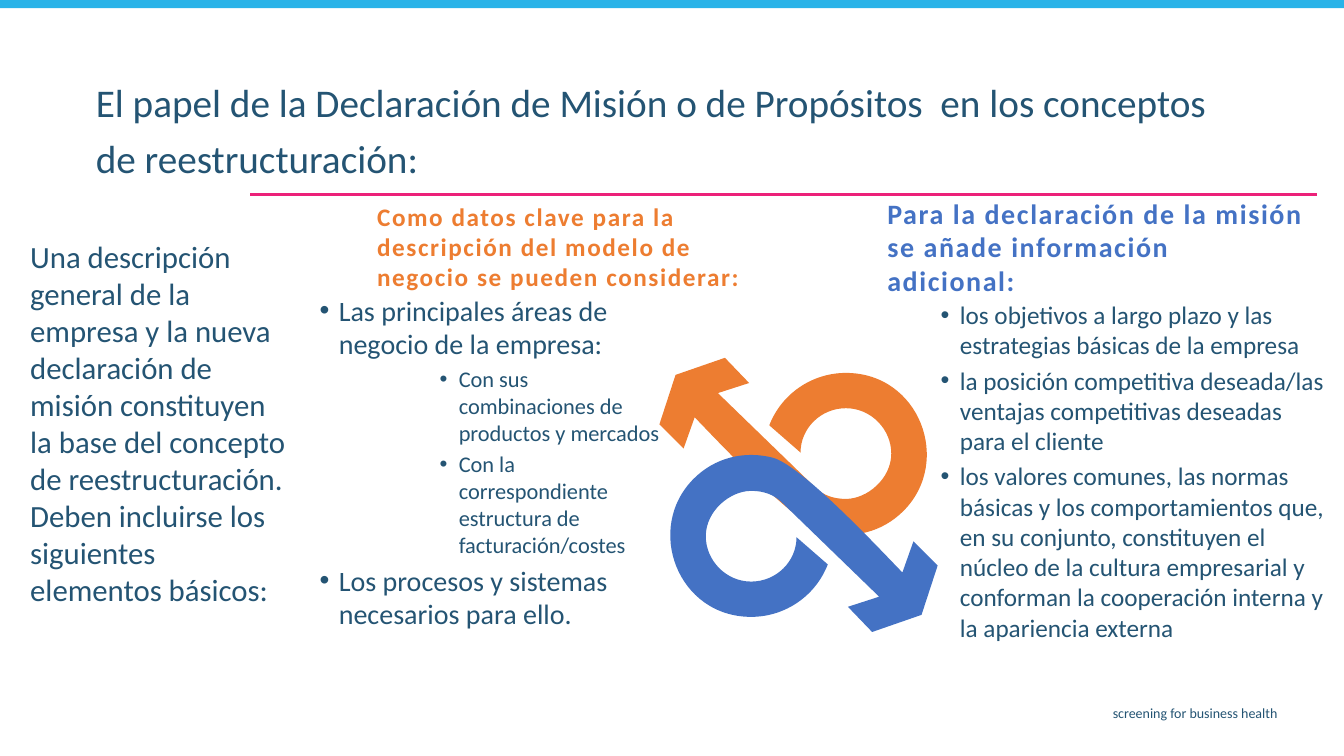
from lxml import etree
from pptx import Presentation
from pptx.dml.color import RGBColor
from pptx.enum.shapes import MSO_CONNECTOR, MSO_SHAPE
from pptx.enum.text import MSO_ANCHOR, MSO_AUTO_SIZE, PP_ALIGN
from pptx.oxml.ns import qn
from pptx.util import Inches, Pt

RECTANGLE = MSO_SHAPE.RECTANGLE
STRAIGHT = MSO_CONNECTOR.STRAIGHT
TOP, MIDDLE = MSO_ANCHOR.TOP, MSO_ANCHOR.MIDDLE
LEFT, RIGHT = PP_ALIGN.LEFT, PP_ALIGN.RIGHT
NO_AUTOFIT = MSO_AUTO_SIZE.NONE

COLORS = {
    "text": "245473",
    "bar": "29B3E8",
    "rule": "EC2179",
    "model": "ED7D31",
    "mission": "4472C4",
}
COMPARISON_LAYOUT = 4
ARROW_CENTER = (7.92, 4.91)
ARROW_START = (8.96, 5.07)
ARROW_SEGMENTS = [
    [(8.75, 5.28), (8.46, 5.35), (8.18, 5.28)],
    [(7.9, 5.21), (7.16, 4.42), (6.89, 4.14)],
    [(6.78, 4.45)],
    [(6.54, 4.21)],
    [(6.7, 3.72)],
    [(7.19, 3.55)],
    [(7.43, 3.8)],
    [(7.12, 3.9)],
    [(8.1, 4.85)],
    [(8.17, 4.91), (8.26, 4.95), (8.39, 4.95)],
    [(8.6, 4.95), (8.84, 4.75), (8.84, 4.5)],
    [(8.84, 4.26), (8.64, 4.05), (8.39, 4.05)],
    [(8.14, 4.05), (7.94, 4.25), (7.94, 4.49)],
    [(7.63, 4.22)],
    [(7.75, 3.91), (8.05, 3.7), (8.39, 3.7)],
    [(9.12, 3.7), (9.45, 4.58), ARROW_START],
]


def half_turn(point):
    return tuple(2 * center - value
                 for center, value in zip(ARROW_CENTER, point))


class SlideBuilder:
    """Draws styled elements on the current slide."""

    def __init__(self, slide, font="Calibri"):
        self.slide = slide
        self.font = font

    def color(self, name):
        return RGBColor.from_string(COLORS[name])

    def place(self, shape, box, anchor=TOP, inset=(0.1, 0.05)):
        shape.left, shape.top, shape.width, shape.height = map(Inches, box)
        frame = shape.text_frame
        frame.word_wrap = True
        frame.auto_size = NO_AUTOFIT
        frame.vertical_anchor = anchor
        frame.margin_left = frame.margin_right = Inches(inset[0])
        frame.margin_top = frame.margin_bottom = Inches(inset[1])
        return frame

    def format_paragraph(self, paragraph, size, color="text", bold=False,
                         align=LEFT, before=0):
        paragraph.alignment = align
        paragraph.space_before = Pt(before)
        for run in paragraph.runs:
            run.font.name = self.font
            run.font.size = Pt(size)
            run.font.bold = bold
            run.font.color.rgb = self.color(color)

    def title(self, lines, box, size):
        frame = self.place(self.slide.shapes.title, box)
        frame.text = "\n".join(lines)
        for index, paragraph in enumerate(frame.paragraphs):
            paragraph.line_spacing = 0.9
            self.format_paragraph(paragraph, size, before=10 if index else 0)

    def heading(self, placeholder, text, box, size, color):
        frame = self.place(self.slide.placeholders[placeholder], box, MIDDLE)
        frame.text = text
        paragraph = frame.paragraphs[0]
        self.format_paragraph(paragraph, size, color, bold=True)
        for run in paragraph.runs:
            run.font._element.set("spc", "112")

    def bullets(self, placeholder, items, box):
        frame = self.place(self.slide.placeholders[placeholder], box,
                           inset=(0.04, 0.02))
        frame.text = "\n".join(text for text, _, _ in items)
        for index, paragraph in enumerate(frame.paragraphs):
            _, size, level = items[index]
            paragraph.level = level
            self.format_paragraph(paragraph, size,
                                  before=0.2 * size if index else 0)
            properties = paragraph._p.get_or_add_pPr()
            properties.set("marL", str(Inches(1.38 if level else 0.19)))
            properties.set("indent", str(Inches(-0.19)))
            bullet_font = etree.SubElement(properties, qn("a:buFont"))
            bullet_font.set("typeface", "Arial")
            etree.SubElement(properties, qn("a:buChar")).set("char", "•")

    def text(self, text, box, size, align=LEFT):
        shape = self.slide.shapes.add_textbox(*map(Inches, box))
        frame = self.place(shape, box, inset=(0.09, 0.04))
        frame.text = text
        self.format_paragraph(frame.paragraphs[0], size, align=align)

    def fill(self, shape, color):
        shape.shadow.inherit = False
        shape.fill.solid()
        shape.fill.fore_color.rgb = self.color(color)
        shape.line.fill.background()

    def bar(self, box, color):
        shape = self.slide.shapes.add_shape(RECTANGLE, *map(Inches, box))
        self.fill(shape, color)

    def rule(self, start, end, color):
        connector = self.slide.shapes.add_connector(
            STRAIGHT, *map(Inches, start + end))
        connector.line.color.rgb = self.color(color)
        connector.line.width = Pt(1.5)
        etree.SubElement(connector._element.spPr, qn("a:effectLst"))

    def curved_outline(self, start, segments, color):
        vertices = [tuple(map(Inches, point))
                    for segment in segments for point in segment]
        builder = self.slide.shapes.build_freeform(*map(Inches, start))
        builder.add_line_segments(vertices, close=True)
        shape = builder.convert_to_shape()
        lines = iter(list(shape._element.iter(qn("a:lnTo"))))
        for segment in segments:
            parts = [next(lines) for _ in segment]
            if len(parts) == 3:
                curve = etree.Element(qn("a:cubicBezTo"))
                parts[0].addprevious(curve)
                for part in parts:
                    curve.append(part[0])
                    part.getparent().remove(part)
        self.fill(shape, color)


def main():
    presentation = Presentation()
    presentation.slide_width = Inches(13.33)
    presentation.slide_height = Inches(7.5)
    layout = presentation.slide_layouts[COMPARISON_LAYOUT]
    builder = SlideBuilder(presentation.slides.add_slide(layout))

    builder.rule((2.48, 1.93), (13.06, 1.93), "rule")
    builder.bar((0, 0, 13.33, 0.08), "bar")
    builder.text("screening for business health", (3.63, 6.95, 9.13, 0.29),
                 10, RIGHT)
    builder.title(
        ["El papel de la Declaración de Misión o de Propósitos  en los conceptos",
         "de reestructuración:"],
        (0.85, 0.78, 12.4, 1.1), 28)
    builder.text(
        "Una descripción general de la empresa y la nueva declaración de misión "
        "constituyen la base del concepto de reestructuración. Deben incluirse "
        "los siguientes elementos básicos:",
        (0.21, 2.32, 2.76, 3.79), 22)
    builder.heading(
        1, "Como datos clave para la descripción del modelo de negocio se "
        "pueden considerar:", (3.64, 1.94, 4.2, 1.01), 18, "model")
    builder.bullets(2, [
        ("Las principales áreas de negocio de la empresa:", 20, 0),
        ("Con sus combinaciones de productos y mercados", 16, 1),
        ("Con la correspondiente estructura de facturación/costes", 16, 1),
        ("Los procesos y sistemas necesarios para ello.", 20, 0),
    ], (3.13, 2.89, 3.53, 3.4))
    builder.heading(
        3, "Para la declaración de la misión se añade información adicional:",
        (8.7, 2.06, 4.33, 0.77), 20, "mission")
    builder.bullets(4, [
        ("los objetivos a largo plazo y las estrategias básicas de la empresa",
         18, 0),
        ("la posición competitiva deseada/las ventajas competitivas deseadas "
         "para el cliente", 18, 0),
        ("los valores comunes, las normas básicas y los comportamientos que, en "
         "su conjunto, constituyen el núcleo de la cultura empresarial y "
         "conforman la cooperación interna y la apariencia externa", 18, 0),
    ], (9.29, 2.95, 3.91, 3.49))
    builder.curved_outline(ARROW_START, ARROW_SEGMENTS, "model")
    turned = [list(map(half_turn, segment)) for segment in ARROW_SEGMENTS]
    builder.curved_outline(half_turn(ARROW_START), turned, "mission")

    presentation.save("out.pptx")


if __name__ == "__main__":
    main()
